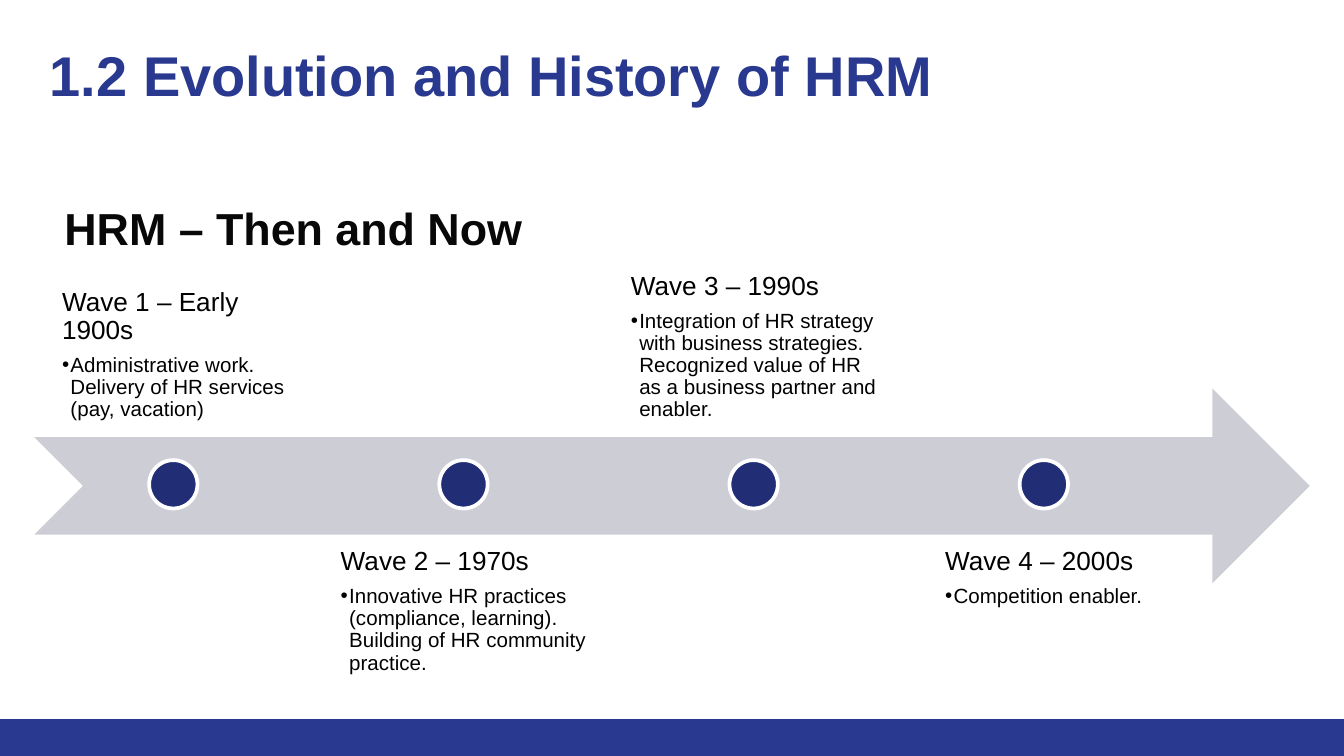
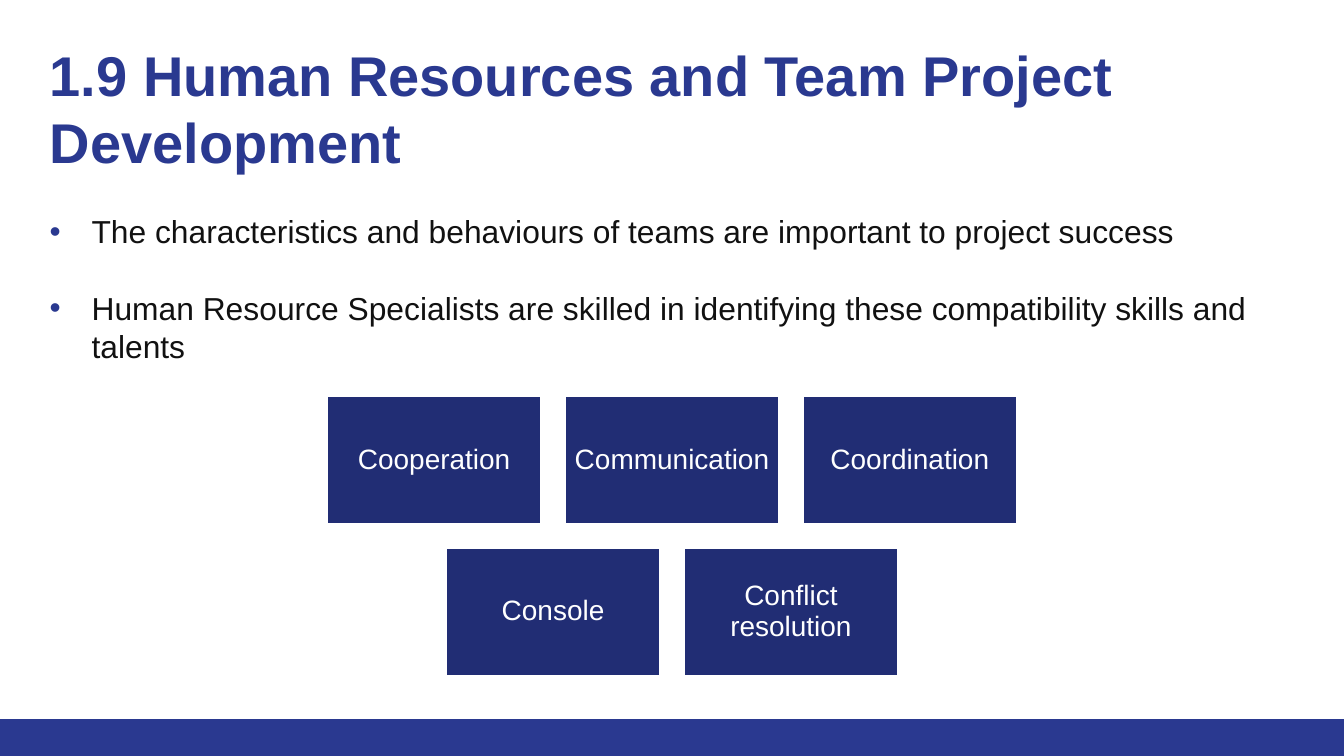
from dataclasses import dataclass
from lxml import etree
from pptx import Presentation, util as u
from pptx.dml.color import RGBColor
from pptx.enum import shapes, text
from pptx.oxml import ns


@dataclass(frozen=True)
class Theme:
    font: str = "Arial"
    blue: str = "2A3990"
    navy: str = "212D74"
    grey: str = "CDCDD6"
    white: str = "FFFFFF"
    black: str = "000000"
    head: str = "080808"
    body: str = "111111"
    title: int = 30
    sub: int = 24
    point: int = 17
    tile: int = 15
    wave: int = 14
    note: int = 11


T = Theme()
deck = Presentation()
deck.slide_width = u.Inches(10)
deck.slide_height = deck.slide_width * 9 // 16
cell = deck.slide_width / 100  # square grid, 100 columns wide
KIND, TOP = shapes.MSO_SHAPE, text.MSO_ANCHOR.TOP


def add(sld, kind, x, y, w, h, fill=None, line=None, pad=1.0, anchor=TOP):
    """Place a shape, or a text box when kind is None, on the grid."""
    area = [u.Emu(round(n * cell)) for n in (x, y, w, h)]
    if kind is None:
        item = sld.shapes.add_textbox(*area)
    else:
        item = sld.shapes.add_shape(kind, *area)
        item.shadow.inherit = False
        item.fill.solid()
        item.fill.fore_color.rgb = RGBColor.from_string(fill)
        if line:
            item.line.color.rgb = RGBColor.from_string(line)
            item.line.width = u.Pt(2)
        else:
            item.line.fill.background()
    frame = item.text_frame
    frame.word_wrap = True
    frame.vertical_anchor = anchor
    frame.margin_left = frame.margin_right = u.Emu(round(pad * cell))
    frame.margin_top = frame.margin_bottom = frame.margin_left
    return item


def write(par, words, size, color, bold=False, lead=1.0, after=0,
          left=0, hang=0, dot=None):
    """Fill a paragraph with one run; dot is the bullet colour."""
    run = par.add_run()
    run.text = words
    run.font.name, run.font.size, run.font.bold = T.font, u.Pt(size), bold
    run.font.color.rgb = RGBColor.from_string(color)
    par.line_spacing, par.space_after = lead, u.Pt(after)
    prop = par._p.get_or_add_pPr()
    prop.set("marL", str(round(left * cell)))
    prop.set("indent", str(-round(hang * cell)))
    if dot:
        tint = etree.SubElement(prop, ns.qn("a:buClr"))
        etree.SubElement(tint, ns.qn("a:srgbClr")).set("val", dot)
        etree.SubElement(prop, ns.qn("a:buFont")).set("typeface", T.font)
        etree.SubElement(prop, ns.qn("a:buChar")).set("char", "•")


# Shared band and title
slides = []
for name, wide, high in (
    ("1.2 Evolution and History of HRM", 93.2, 6.6),
    ("1.9 Human Resources and Team Project Development", 92, 8.9),
):
    sld = deck.slides.add_slide(deck.slide_layouts[5])
    add(sld, KIND.RECTANGLE, 0, 53.5, 100, 2.75, T.blue)
    head = sld.shapes.title
    head.left, head.top, head.width, head.height = [
        u.Emu(round(n * cell)) for n in (2.7, 2, wide, high)]
    frame = head.text_frame
    frame.word_wrap = True
    frame.auto_size = text.MSO_AUTO_SIZE.NONE
    frame.vertical_anchor = TOP
    frame.margin_left = frame.margin_right = u.Emu(round(cell))
    frame.margin_top = frame.margin_bottom = frame.margin_left
    par = frame.paragraphs[0]
    par.alignment = text.PP_ALIGN.LEFT
    write(par, name, T.title, T.blue, bold=True)
    slides.append(sld)
past, team = slides

# Subtitle and time arrow
sub = add(past, None, 2.6, 13.75, 69.2, 6.2)
write(sub.text_frame.paragraphs[0], "HRM – Then and Now", T.sub, T.head,
      bold=True, lead=1.05, left=1.2)
add(past, KIND.NOTCHED_RIGHT_ARROW, 2.55, 28.9, 94.9, 14.5, T.grey)

# Waves, in turn above and below the arrow
waves = (
    ("Wave 1 – Early 1900s",
     "Administrative work. Delivery of HR services (pay, vacation)"),
    ("Wave 2 – 1970s",
     "Innovative HR practices (compliance, learning). "
     "Building of HR community practice."),
    ("Wave 3 – 1990s",
     "Integration of HR strategy with business strategies. "
     "Recognized value of HR as a business partner and enabler."),
    ("Wave 4 – 2000s", "Competition enabler."),
)
wide, dia = 20.6, 3.6
for i, (name, note) in enumerate(waves):
    x = 2.6 + 21.59 * i
    y, anchor = (39.7, TOP) if i % 2 else (17.94, text.MSO_ANCHOR.BOTTOM)
    item = add(past, None, x, y, wide, 14.5, pad=1.1, anchor=anchor)
    frame = item.text_frame
    frame._txBody.bodyPr.set("anchorCtr", "1")
    write(frame.paragraphs[0], name, T.wave, T.black, lead=0.9, after=4.9)
    par = frame.add_paragraph()
    par.level = 1
    write(par, note, T.note, T.black, lead=0.9, after=1.65,
          left=0.63, hang=0.63, dot=T.black)
    add(past, KIND.OVAL, x + (wide - dia) / 2, 34.24, dia, dia, T.navy, T.white)

# Team points
points = (
    "The characteristics and behaviours of teams are important to project "
    "success",
    "Human Resource Specialists are skilled in identifying these "
    "compatibility skills and talents",
)
frame = add(team, None, 2.7, 15.3, 94.1, 12.5, pad=0.5).text_frame
frame.margin_left = frame.margin_right = u.Emu(round(cell))
for i, words in enumerate(points):
    par = frame.add_paragraph() if i else frame.paragraphs[0]
    write(par, words, T.point, T.body, after=0 if i else 20.4,
          left=3.13, hang=3.13, dot=T.blue)

# Skill tiles, each row centred
rows = (("Cooperation", "Communication", "Coordination"),
        ("Console", "Conflict resolution"))
wide, high, gap = 16.1, 9.65, 1.6
for r, row in enumerate(rows):
    x = 50 - (len(row) * (wide + gap) - gap) / 2
    for c, name in enumerate(row):
        item = add(team, KIND.RECTANGLE, x + c * (wide + gap), 29.4 + 11.3 * r,
                   wide, high, T.navy, T.white, 0.6, text.MSO_ANCHOR.MIDDLE)
        par = item.text_frame.paragraphs[0]
        par.alignment = text.PP_ALIGN.CENTER
        write(par, name, T.tile, T.white, lead=0.9)

deck.save("out.pptx")
